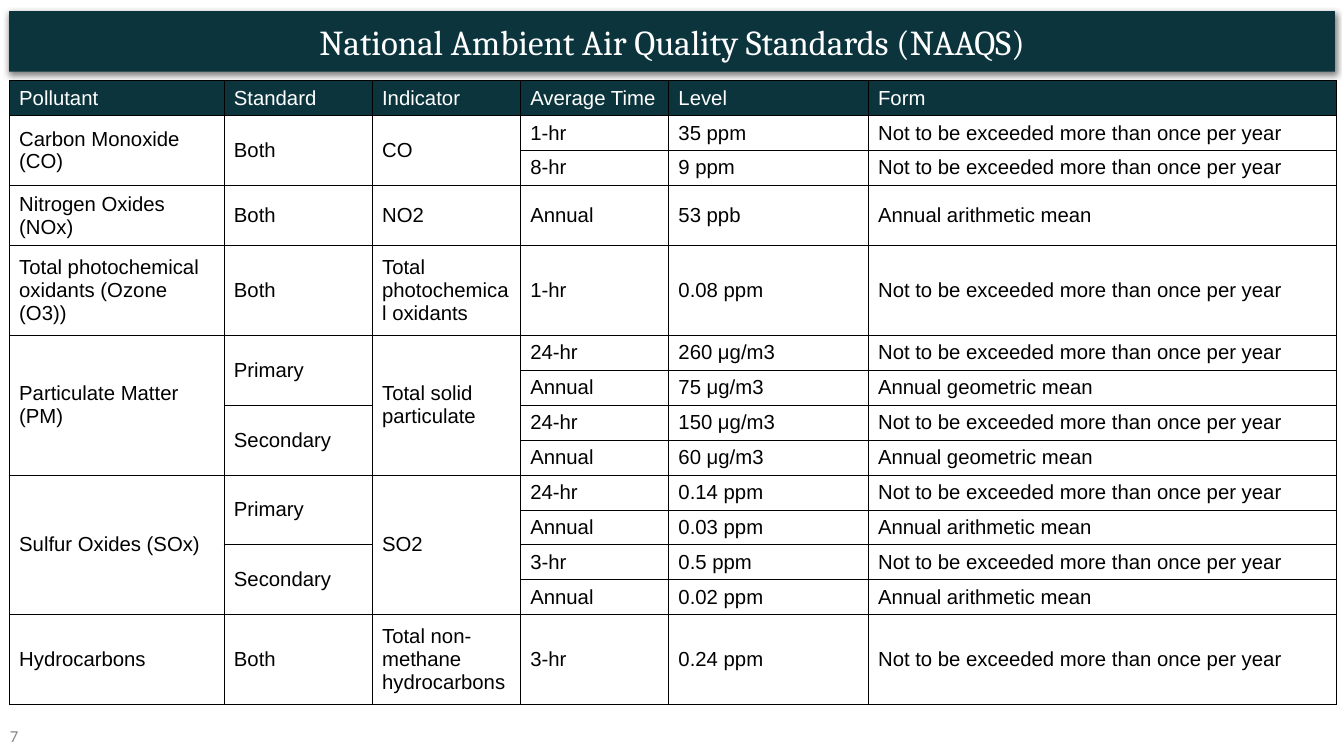
from dataclasses import dataclass

from lxml.etree import SubElement
from pptx import Presentation
from pptx.dml.color import RGBColor
from pptx.enum.text import MSO_ANCHOR, MSO_AUTO_SIZE, PP_ALIGN
from pptx.oxml.ns import qn
from pptx.util import Inches, Pt


@dataclass(frozen=True)
class Theme:
    teal: RGBColor = RGBColor(0x0C, 0x34, 0x3D)
    white: RGBColor = RGBColor(0xFF, 0xFF, 0xFF)
    black: RGBColor = RGBColor(0x00, 0x00, 0x00)
    gray: RGBColor = RGBColor(0x88, 0x88, 0x88)
    title_size: float = 25
    table_size: float = 14.5
    number_size: float = 12
    border_width: float = 0.5


THEME = Theme()

ONCE = "Not to be exceeded more than once per year"
ARITHMETIC = "Annual arithmetic mean"
GEOMETRIC = "Annual geometric mean"

# None continues the cell above it.
STANDARDS = [
    ["Pollutant", "Standard", "Indicator", "Average Time", "Level", "Form"],
    ["Carbon Monoxide (CO)", "Both", "CO", "1-hr", "35 ppm", ONCE],
    [None, None, None, "8-hr", "9 ppm", ONCE],
    ["Nitrogen Oxides (NOx)", "Both", "NO2", "Annual", "53 ppb", ARITHMETIC],
    ["Total photochemical oxidants (Ozone (O3))", "Both",
     "Total photochemical oxidants", "1-hr", "0.08 ppm", ONCE],
    ["Particulate Matter (PM)", "Primary", "Total solid particulate",
     "24-hr", "260 μg/m3", ONCE],
    [None, None, None, "Annual", "75 μg/m3", GEOMETRIC],
    [None, "Secondary", None, "24-hr", "150 μg/m3", ONCE],
    [None, None, None, "Annual", "60 μg/m3", GEOMETRIC],
    ["Sulfur Oxides (SOx)", "Primary", "SO2", "24-hr", "0.14 ppm", ONCE],
    [None, None, None, "Annual", "0.03 ppm", ARITHMETIC],
    [None, "Secondary", None, "3-hr", "0.5 ppm", ONCE],
    [None, None, None, "Annual", "0.02 ppm", ARITHMETIC],
    ["Hydrocarbons", "Both", "Total non-methane hydrocarbons",
     "3-hr", "0.24 ppm", ONCE],
]
COLUMN_WIDTHS = [2.13, 1.47, 1.47, 1.47, 1.98, 4.64]
TALL_ROWS = {3: 0.6, 4: 0.89, 13: 0.89}
LEFT, WIDTH, TABLE_HEIGHT = 0.09, 13.15, 6.19


def add_text(paragraph, text, font_name, size, color):
    run = paragraph.add_run()
    run.text = text
    run.font.name = font_name
    run.font.size = Pt(size)
    run.font.color.rgb = color


def add_borders(cell):
    properties = cell._tc.get_or_add_tcPr()
    for side in ("lnL", "lnR", "lnT", "lnB"):
        line = SubElement(properties, qn(f"a:{side}"), w=str(Pt(THEME.border_width)))
        fill = SubElement(line, qn("a:solidFill"))
        SubElement(fill, qn("a:srgbClr"), val=str(THEME.black))


presentation = Presentation()
presentation.slide_width = Inches(13.33)
presentation.slide_height = Inches(7.5)
slide = presentation.slides.add_slide(presentation.slide_layouts[5])

# Title banner
title = slide.shapes.title
title.left, title.top = Inches(LEFT), Inches(0.11)
title.width, title.height = Inches(WIDTH), Inches(0.6)
title.fill.solid()
title.fill.fore_color.rgb = THEME.teal
title.line.fill.background()
effects = SubElement(title._element.spPr, qn("a:effectLst"))
shadow = SubElement(effects, qn("a:outerShdw"), blurRad=str(Pt(4.5)),
                    dist=str(Pt(1.5)), dir=str(90 * 60000), algn="bl", rotWithShape="0")
shadow_color = SubElement(shadow, qn("a:srgbClr"), val=str(THEME.black))
SubElement(shadow_color, qn("a:alpha"), val="50000")

banner = title.text_frame
banner.auto_size = MSO_AUTO_SIZE.NONE
banner.word_wrap = True
banner.vertical_anchor = MSO_ANCHOR.MIDDLE
banner.margin_left = banner.margin_right = Inches(0.1)
banner.margin_top = banner.margin_bottom = Inches(0.1)
banner.paragraphs[0].alignment = PP_ALIGN.CENTER
add_text(banner.paragraphs[0], "National Ambient Air Quality Standards (NAAQS)",
         "Cambria", THEME.title_size, THEME.white)

# Standards table
row_count, column_count = len(STANDARDS), len(COLUMN_WIDTHS)
table = slide.shapes.add_table(row_count, column_count, Inches(LEFT), Inches(0.8),
                               Inches(WIDTH), Inches(TABLE_HEIGHT)).table
table.first_row = True
table.horz_banding = False
for column, width in zip(table.columns, COLUMN_WIDTHS):
    column.width = Inches(width)
single_height = (TABLE_HEIGHT - sum(TALL_ROWS.values())) / (row_count - len(TALL_ROWS))
for index, row in enumerate(table.rows):
    row.height = Inches(TALL_ROWS.get(index, single_height))

for r, entries in enumerate(STANDARDS):
    is_header = r == 0
    for c, entry in enumerate(entries):
        cell = table.cell(r, c)
        add_borders(cell)
        if is_header:
            cell.fill.solid()
            cell.fill.fore_color.rgb = THEME.teal
        else:
            cell.fill.background()
        if entry is None:
            continue
        cell.vertical_anchor = MSO_ANCHOR.MIDDLE
        cell.margin_left = cell.margin_right = Inches(0.1)
        cell.margin_top = cell.margin_bottom = Inches(0.01)
        paragraph = cell.text_frame.paragraphs[0]
        paragraph.font.bold = False
        add_text(paragraph, entry, "Arial", THEME.table_size,
                 THEME.white if is_header else THEME.black)
        paragraph.runs[0].font.bold = False
        last = r
        while last + 1 < row_count and STANDARDS[last + 1][c] is None:
            last += 1
        if last > r:
            cell.merge(table.cell(last, c))

# Slide number
slide_number = slide.shapes.add_textbox(
    Inches(0), Inches(7.1), Inches(3), Inches(0.4)).text_frame
slide_number.word_wrap = True
slide_number.vertical_anchor = MSO_ANCHOR.MIDDLE
add_text(slide_number.paragraphs[0], "7", "Calibri", THEME.number_size, THEME.gray)

presentation.save("out.pptx")
